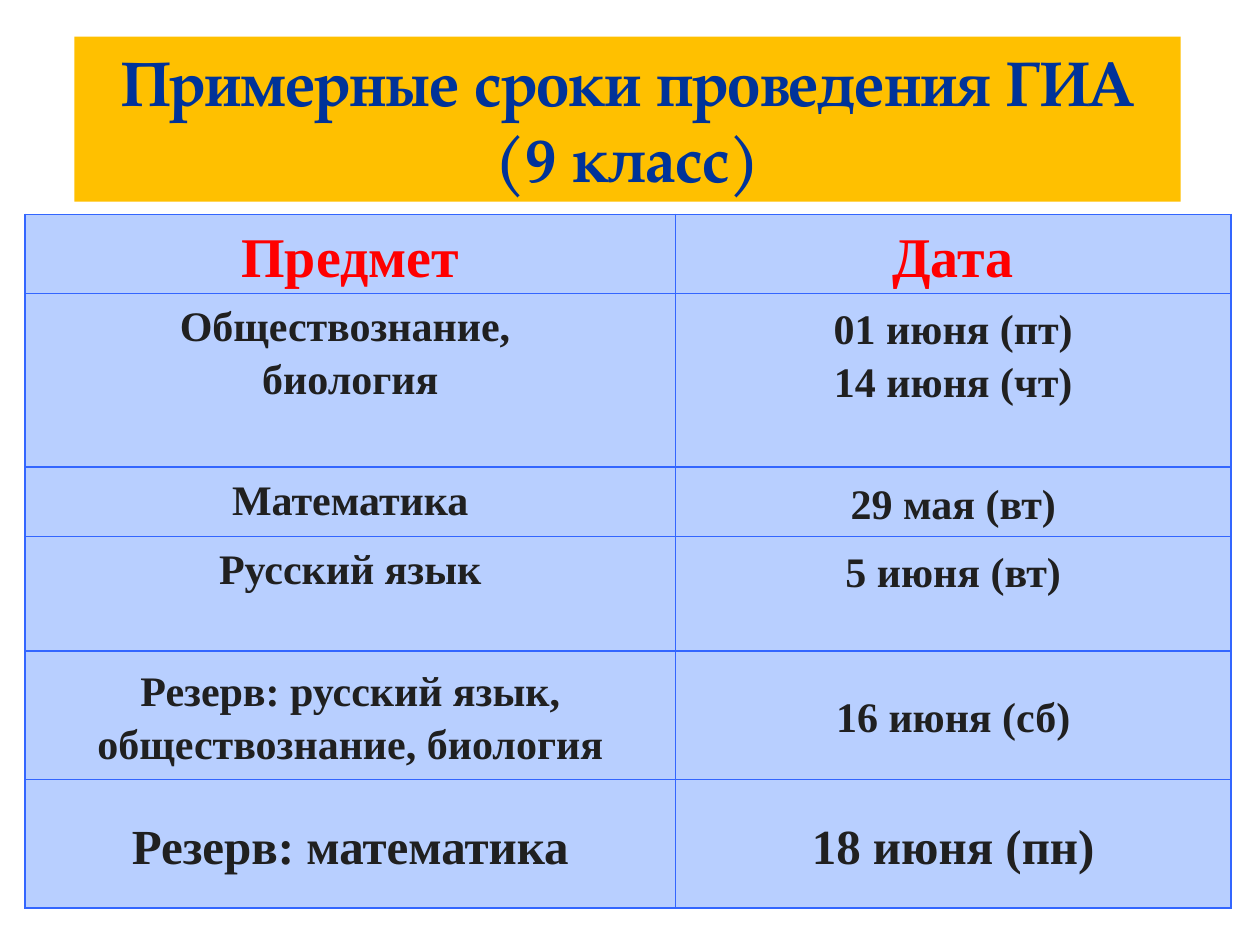
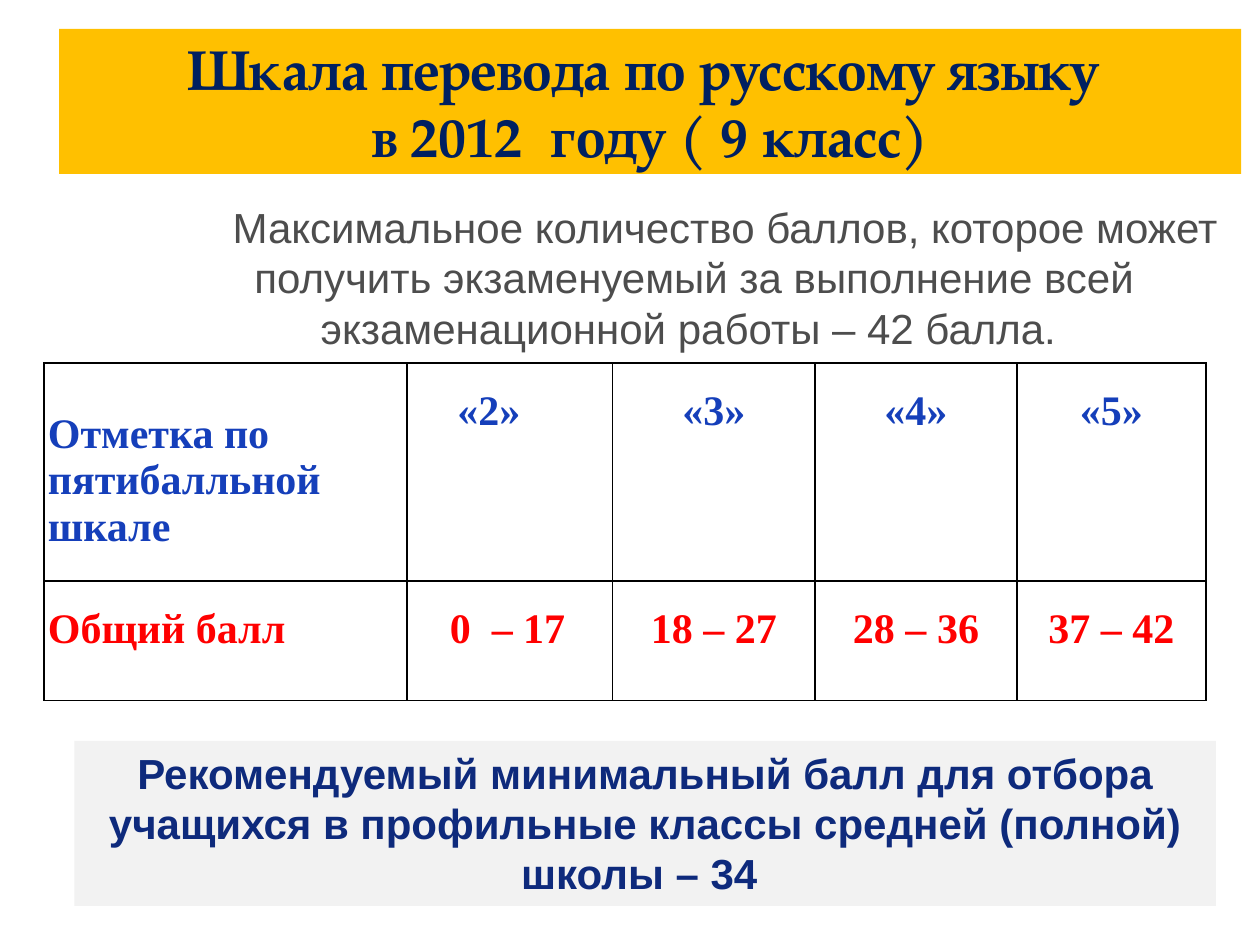
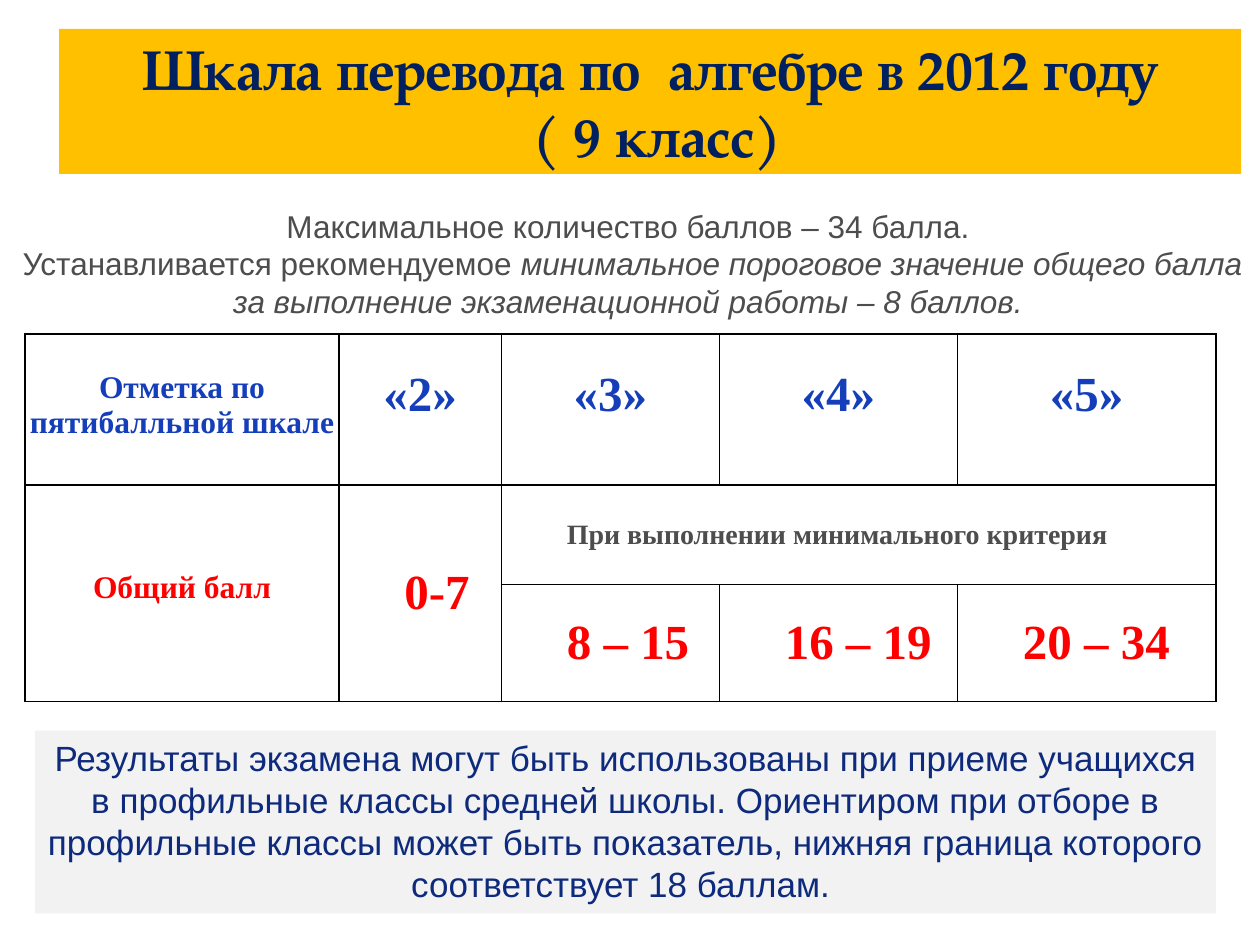
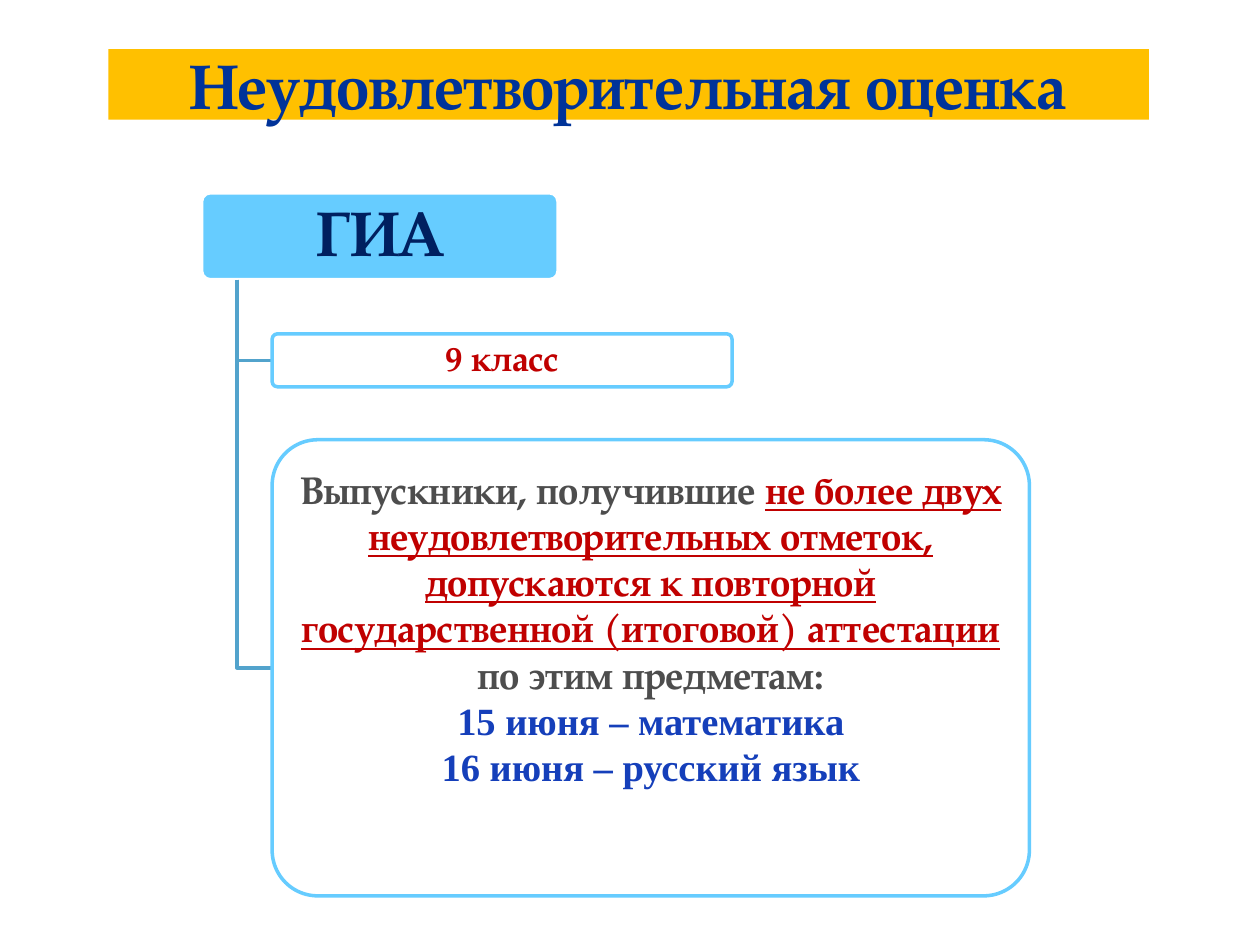
"""Build four slides on the dates, grading scales and retakes of the grade 9 state exam."""
from lxml.etree import SubElement
from pptx import Presentation
from pptx.dml.color import RGBColor
from pptx.enum.shapes import MSO_SHAPE
from pptx.enum.text import MSO_ANCHOR, PP_ALIGN
from pptx.oxml.ns import qn
from pptx.util import Emu, Inches, Pt

SERIF, SANS, TITLE = "Times New Roman", "Arial", "TeX Gyre Pagella"
GOLD, PALE, SKY, WHITE = "FFC000", "F2F2F2", "66CCFF", "FFFFFF"
NAVY, ROYAL, INK, BLUE = "002060", "003399", "0E2A7C", "153FBA"
RED, CRIMSON, GREY, DARK = "FF0000", "C00000", "4D4D4D", "202020"
TOP, MIDDLE = MSO_ANCHOR.TOP, MSO_ANCHOR.MIDDLE
LEFT, CENTER = PP_ALIGN.LEFT, PP_ALIGN.CENTER
TIGHT = Pt(13.8)


def rgb(value):
    """Turn a hex string into a colour."""
    return RGBColor.from_string(value)


def write(box, lines, size, color, font=SERIF, bold=True, align=CENTER, anchor=MIDDLE,
          margins=(0.1, 0.05, 0.1, 0.05), spacing=None, indent=0):
    """Fill a text frame or table cell; a line is a string or a list of (text, changes)."""
    box.margin_left, box.margin_top, box.margin_right, box.margin_bottom = map(Inches, margins)
    box.vertical_anchor = anchor
    tf = getattr(box, "text_frame", box)
    for i, line in enumerate(lines):
        p = tf.add_paragraph() if i else tf.paragraphs[0]
        p.alignment = align
        if spacing:
            p.line_spacing = spacing
        if indent:
            p._p.get_or_add_pPr().set("indent", str(Inches(indent)))
        for text, changes in [(line, {})] if isinstance(line, str) else line:
            for n, part in enumerate(text.split("\n")):
                if n:
                    p.add_line_break()
                r = p.add_run()
                r.text = part
                r.font.size, r.font.bold = Pt(size), bold
                r.font.name = changes.get("font", font)
                r.font.color.rgb = rgb(changes.get("color", color))
                r.font.italic = changes.get("italic")
                r.font.underline = changes.get("underline")


prs = Presentation()
prs.slide_width, prs.slide_height = Inches(10), Inches(7.5)
COL, ROW = prs.slide_width / 100, prs.slide_height / 100
dates, russian, algebra, retake = [prs.slides.add_slide(prs.slide_layouts[6]) for _ in range(4)]

early = dict(size=36, color=ROYAL, font=TITLE)
scale = dict(size=32, color=NAVY, font=TITLE)
intro = dict(color=GREY, font=SANS, bold=False)
note = dict(color=INK, font=SANS, anchor=TOP)
scale_band = (4.7, 3.07, 93.8, 15.33)

boxes = [
    (dates, (5.9, 3.87, 87.8, 17.47), GOLD, ["Примерные сроки проведения ГИА (9 класс)"], early),
    (russian, scale_band, GOLD,
     ["Шкала перевода по русскому языку \nв 2012  году ( 9 класс)"], scale),
    (russian, (10.2, 20.67, 89.8, 17.47), None,
     ["Максимальное количество баллов, которое может получить экзаменуемый "
      "за выполнение всей экзаменационной работы – 42 балла. "],
     dict(intro, size=24, anchor=TOP, indent=0.49)),
    (russian, (5.9, 78.4, 90.6, 17.47), PALE,
     ["Рекомендуемый минимальный балл для отбора учащихся в профильные классы "
      "средней (полной) школы – 34 "], dict(note, size=24)),
    (algebra, scale_band, GOLD,
     ["Шкала перевода по  алгебре в 2012 году\n ( 9 класс)"], scale),
    (algebra, (0.4, 19.6, 99.6, 16.53), None,
     ["Максимальное количество баллов – 34 балла. ",
      [("Устанавливается рекомендуемое ", {}),
       ("минимальное пороговое значение общего балла за выполнение "
        "экзаменационной работы – 8 баллов. ", dict(italic=True))]],
     dict(intro, size=18)),
    (algebra, (2.8, 77.33, 93.7, 19.33), PALE,
     ["Результаты экзамена могут быть использованы при приеме учащихся в профильные "
      "классы средней школы. Ориентиром при отборе в профильные классы может быть "
      "показатель, нижняя граница которого соответствует 18 баллам. "],
     dict(note, size=20, bold=False)),
    (retake, (8.6, 5.2, 82.6, 7.47), GOLD, ["Неудовлетворительная оценка"], early),
]
for s, (x, y, w, h), fill, lines, style in boxes:
    at = Emu(int(x * COL)), Emu(int(y * ROW)), Emu(int(w * COL)), Emu(int(h * ROW))
    if fill:
        sp = s.shapes.add_shape(MSO_SHAPE.RECTANGLE, *at)
        sp.shadow.inherit = False
        sp.fill.solid()
        sp.fill.fore_color.rgb = rgb(fill)
        sp.line.fill.background()
    else:
        sp = s.shapes.add_textbox(*at)
    sp.text_frame.word_wrap = True
    write(sp.text_frame, lines, **style)

head = dict(size=32, color=RED, margins=(0.03,) * 4, spacing=1.15)
body = dict(head, size=24, color=DARK)
upper = dict(body, anchor=TOP)
lower = dict(upper, margins=(0.03, 0.05, 0.03, 0.03))
reserve = dict(body, size=28)
schedule = [
    (["Предмет"], head, ["Дата"], head),
    (["Обществознание, ", "биология"], upper, ["01 июня (пт)", "14 июня (чт)"], lower),
    (["Математика"], upper, ["29 мая (вт)"], body),
    (["Русский язык"], upper, ["5 июня (вт)"], lower),
    (["Резерв: русский язык, обществознание, биология"], body, ["16 июня (сб)"], body),
    (["Резерв: математика"], reserve, ["18 июня (пн)"], reserve),
]
date_cells = []
for i, (subject, left_style, date, right_style) in enumerate(schedule):
    date_cells += [(i, 0, subject, left_style), (i, 1, date, right_style)]

label = dict(size=24, anchor=TOP, align=LEFT, margins=(0.03, 0.38, 0.03, 0))
russian_cells = [
    (0, 0, ["Отметка по пятибалльной шкале"], dict(label, color=BLUE)),
    (1, 0, ["Общий балл"], dict(label, color=RED, spacing=TIGHT)),
    (0, 1, ["«2»"], dict(label, color=BLUE, spacing=TIGHT, margins=(0.4, 0.38, 0.03, 0))),
    (1, 1, ["0  – 17"], dict(label, color=RED, spacing=TIGHT, margins=(0.34, 0.38, 0.03, 0))),
]
for j, (mark, score) in enumerate([("«3»", "18 – 27"), ("«4»", "28 – 36"), ("«5»", "37 – 42")], 2):
    for i, (text, color) in enumerate([(mark, BLUE), (score, RED)]):
        russian_cells.append((i, j, [text], dict(label, color=color, align=CENTER, spacing=TIGHT)))

narrow = dict(size=18, margins=(0.02, 0, 0.02, 0))
inset = dict(size=28, color=RED, align=LEFT, margins=(0.52, 0, 0.02, 0))
algebra_cells = [
    (0, 0, ["Отметка по пятибалльной шкале"],
     dict(narrow, color=BLUE, anchor=TOP, margins=(0.02, 0.29, 0.02, 0))),
    (1, 0, ["Общий балл"], dict(narrow, color=RED, spacing=TIGHT)),
    (1, 1, ["0-7"], inset),
    (1, 2, ["При выполнении минимального критерия"], dict(inset, size=16, color=GREY)),
]
for j in range(1, 5):
    algebra_cells.append((0, j, [f"«{j + 1}»"], dict(narrow, size=28, color=BLUE, spacing=TIGHT)))
for j, score in enumerate(["8 – 15", "16 – 19", "20 – 34"], 2):
    algebra_cells.append((2, j, [score], inset))

tables = [
    (dates, 2, 22.67, [51.6, 44.1], [7.87, 18.4, 7.33, 12.13, 13.6, 13.6],
     "3366FF", "B8CFFF", [], date_cells),
    (russian, 3.5, 38.4, [28.8, 16.3, 16.1, 16, 15], [23.07, 12.67],
     "000000", None, [], russian_cells),
    (algebra, 2, 35.33, [24.9, 12.9, 17.3, 18.9, 20.5], [16, 10.53, 12.4],
     "000000", None, [(1, 0, 2, 0), (1, 1, 2, 1), (1, 2, 1, 4)], algebra_cells),
]
for s, x, y, cols, rows, border, fill, merges, cells in tables:
    table = s.shapes.add_table(len(rows), len(cols), Emu(int(x * COL)), Emu(int(y * ROW)),
                               Emu(int(sum(cols) * COL)), Emu(int(sum(rows) * ROW))).table
    table.first_row = table.horz_banding = False
    for column, w in zip(table.columns, cols):
        column.width = Emu(int(w * COL))
    for row, h in zip(table.rows, rows):
        row.height = Emu(int(h * ROW))
    for cell in table.iter_cells():
        tcPr = cell._tc.get_or_add_tcPr()
        for side in ("lnL", "lnR", "lnT", "lnB"):
            ln = SubElement(tcPr, qn(f"a:{side}"), w=str(Pt(1)))
            SubElement(SubElement(ln, qn("a:solidFill")), qn("a:srgbClr"), val=border)
        if fill:
            cell.fill.solid()
            cell.fill.fore_color.rgb = rgb(fill)
        else:
            cell.fill.background()
    for top, left, bottom, right in merges:
        table.cell(top, left).merge(table.cell(bottom, right))
    for i, j, lines, style in cells:
        write(table.cell(i, j), lines, **style)

TRUNK_X, TRUNK_Y = 18.8, 29.6
stress = dict(color=CRIMSON, underline=True)
day = dict(font=SERIF, color=BLUE)
nodes = [
    ((16, 20.4, 28.3, 9.2), SKY, WHITE, ["ГИА"],
     dict(size=36, color=NAVY, spacing=0.9, margins=(0.07, 0.05, 0.07, 0.05))),
    ((21.6, 35.33, 36.5, 5.6), WHITE, SKY, ["9 класс"],
     dict(size=20, color=CRIMSON, spacing=0.9, margins=(0.04, 0.03, 0.04, 0.03))),
    ((21.6, 46.53, 60.1, 48.27), WHITE, SKY,
     [[("Выпускники, получившие ", {}),
       ("не более двух неудовлетворительных отметок, допускаются к повторной "
        "государственной (итоговой) аттестации", stress),
       (" по этим предметам:", {})],
      [("15 июня – математика", day)],
      [("16 июня – русский язык", day)]],
     dict(size=22, color=GREY, margins=(0.05, 0.03, 0.05, 0.67))),
]
for (x, y, w, h), fill, line, lines, style in nodes:
    if x > TRUNK_X:
        elbow = retake.shapes.build_freeform(int(TRUNK_X * COL), int(TRUNK_Y * ROW))
        middle = int((y + h / 2) * ROW)
        elbow.add_line_segments([(int(TRUNK_X * COL), middle), (int(x * COL), middle)], close=False)
        sp = elbow.convert_to_shape()
        sp.shadow.inherit = False
        sp.fill.background()
        sp.line.color.rgb = rgb("52A3CC")
        sp.line.width = Pt(2)
    sp = retake.shapes.add_shape(MSO_SHAPE.ROUNDED_RECTANGLE, Emu(int(x * COL)), Emu(int(y * ROW)),
                                 Emu(int(w * COL)), Emu(int(h * ROW)))
    sp.adjustments[0] = 0.1
    sp.shadow.inherit = False
    sp.fill.solid()
    sp.fill.fore_color.rgb = rgb(fill)
    sp.line.color.rgb = rgb(line)
    sp.line.width = Pt(2)
    sp.text_frame.word_wrap = True
    write(sp.text_frame, lines, font=TITLE, **style)

prs.save("out.pptx")
